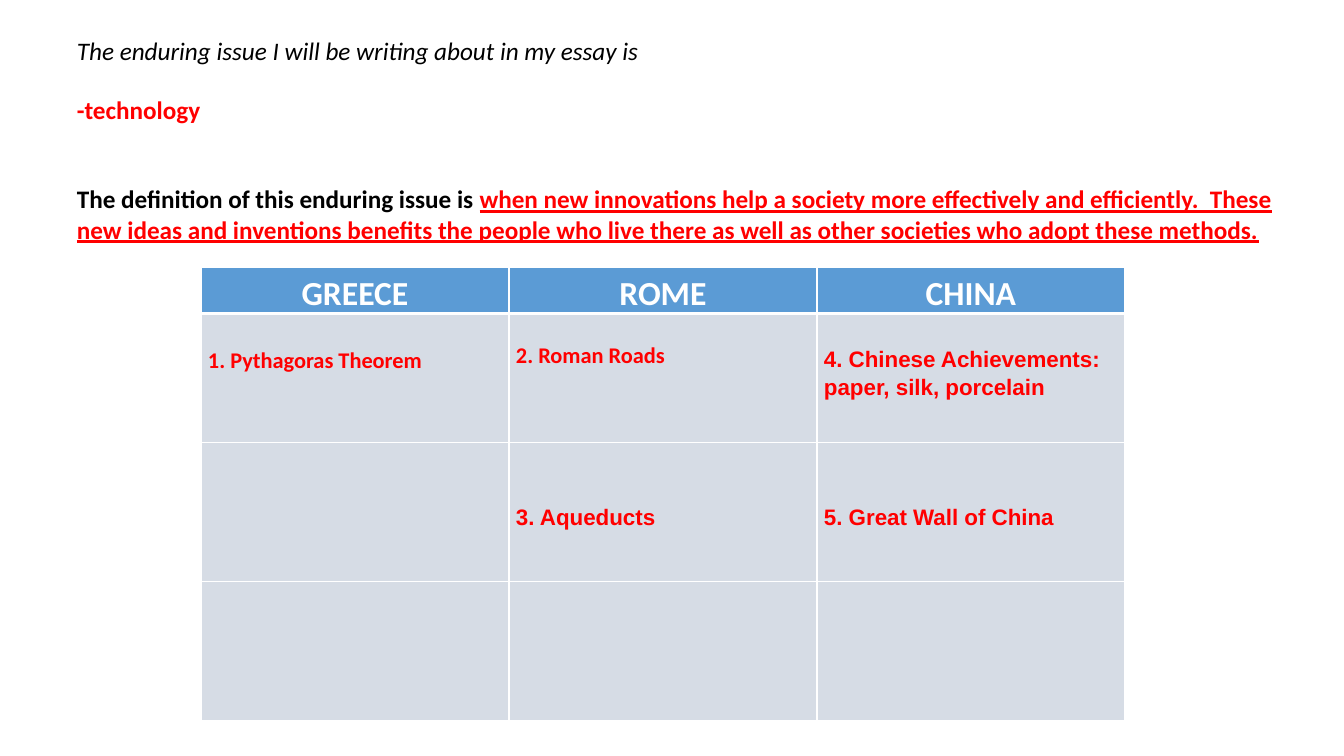
from lxml import etree
from pptx import Presentation
from pptx import util as u
from pptx.dml.color import RGBColor
from pptx.enum import text
from pptx.oxml.ns import qn

# Content
BLACK, RED, WHITE, BLUE, GRAY = "000000", "FF0000", "FFFFFF", "5B9BD5", "D6DCE5"

# Each paragraph: space before in points, then runs of (wording, colour, styles)
ESSAY = [
    (0, [("The enduring issue I will be writing about in my essay is", BLACK, ["italic"])]),
    (21, [("-technology", RED, ["bold"])]),
    (42, [
        ("The definition of this enduring issue is ", BLACK, ["bold"]),
        ("when new innovations help a society more effectively and efficiently.  "
         "These new ideas and inventions benefits the people who live there "
         "as well as other societies who adopt these methods.", RED, ["bold", "underline"]),
    ]),
]
CIVILIZATIONS = ["GREECE", "ROME", "CHINA"]
# Each achievement: wording, font, top margin in px
ACHIEVEMENTS = [
    [("1. Pythagoras Theorem", "Calibri", 30), ("2. Roman Roads", "Calibri", 25),
     ("4. Chinese Achievements: paper, silk, porcelain", "Arial", 30)],
    [None, ("3. Aqueducts", "Arial", 59), ("5. Great Wall of China", "Arial", 59)],
    [None, None, None],
]

# Layout in px
SLIDE = (1344, 756)
ESSAY_BOX = (67, 30, 1227, 346)
TABLE_LEFT, TABLE_TOP, COLUMN_WIDTH = 201, 267, 308
ROW_HEIGHTS = [46, 129, 139, 139]
CELL_MARGIN = 7


def px(length):
    return u.Emu(length * 9072)


def color(value):
    return RGBColor.from_string(value)


def add_run(paragraph, wording, font, size, fill, styles):
    run = paragraph.add_run()
    run.text = wording
    run.font.name, run.font.size = font, u.Pt(size)
    run.font.color.rgb = color(fill)
    for style in styles:
        setattr(run.font, style, True)


def set_borders(cell, widths):
    properties = cell._tc.get_or_add_tcPr()
    for index, (side, points) in enumerate(widths.items()):
        line = etree.Element(qn("a:" + side), w=str(u.Pt(points)))
        fill = etree.SubElement(line, qn("a:solidFill"))
        etree.SubElement(fill, qn("a:srgbClr"), val=WHITE)
        properties.insert(index, line)


def fill_cell(cell, wording, font, size, ink, top=0, align=text.PP_ALIGN.LEFT):
    cell.margin_left = cell.margin_right = px(CELL_MARGIN)
    cell.margin_top, cell.margin_bottom = px(top), 0
    paragraph = cell.text_frame.paragraphs[0]
    paragraph.alignment, paragraph.line_spacing = align, 1.15
    add_run(paragraph, wording, font, size, ink, ["bold"])


presentation = Presentation()
presentation.slide_width, presentation.slide_height = map(px, SLIDE)
slide = presentation.slides.add_slide(presentation.slide_layouts[6])

# Essay statement
frame = slide.shapes.add_textbox(*map(px, ESSAY_BOX)).text_frame
frame.word_wrap = True
for index, (space, runs) in enumerate(ESSAY):
    paragraph = frame.add_paragraph() if index else frame.paragraphs[0]
    paragraph.space_before = u.Pt(space)
    for wording, ink, styles in runs:
        add_run(paragraph, wording, "Calibri", 18, ink, styles)

# Table grid
table = slide.shapes.add_table(
    len(ROW_HEIGHTS), len(CIVILIZATIONS), px(TABLE_LEFT), px(TABLE_TOP),
    px(COLUMN_WIDTH * len(CIVILIZATIONS)), px(sum(ROW_HEIGHTS))).table
for column in table.columns:
    column.width = px(COLUMN_WIDTH)
for row, height in zip(table.rows, ROW_HEIGHTS):
    row.height = px(height)
for row_index, row in enumerate(table.rows):
    for cell in row.cells:
        cell.fill.solid()
        cell.fill.fore_color.rgb = color(GRAY if row_index else BLUE)
        set_borders(cell, {"lnL": 1, "lnR": 1, "lnT": 3 if row_index == 1 else 1,
                           "lnB": 1 if row_index else 3})

# Table wording
for column_index, name in enumerate(CIVILIZATIONS):
    fill_cell(table.cell(0, column_index), name, "Calibri", 24, WHITE,
              align=text.PP_ALIGN.CENTER)
for row_index, achievements in enumerate(ACHIEVEMENTS, 1):
    for column_index, achievement in enumerate(achievements):
        if achievement:
            wording, font, top = achievement
            fill_cell(table.cell(row_index, column_index), wording, font, 16, RED, top)

presentation.save("out.pptx")
